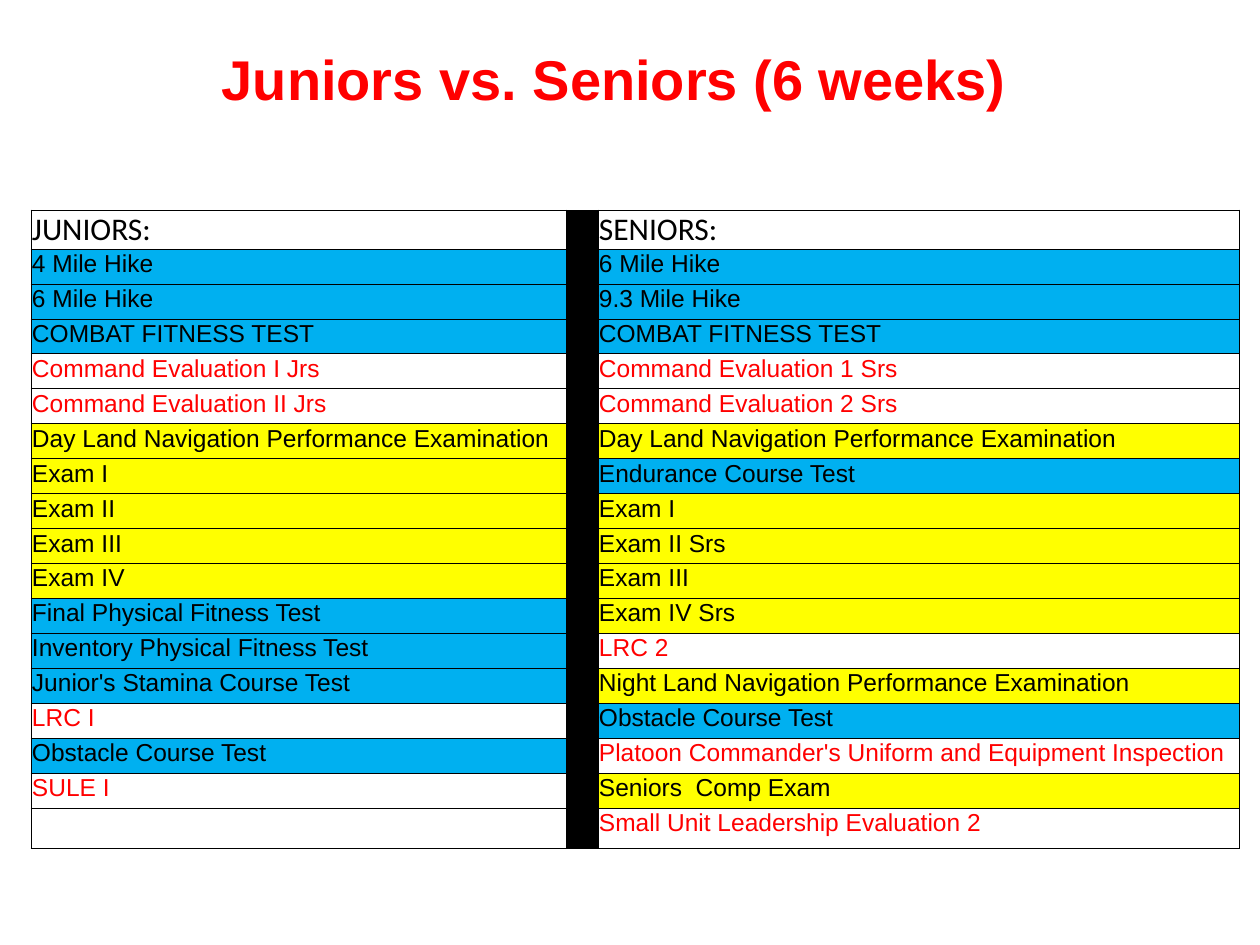
from dataclasses import dataclass
from itertools import zip_longest

from lxml.etree import SubElement
from pptx import Presentation
from pptx.dml.color import RGBColor
from pptx.enum.text import MSO_ANCHOR, PP_ALIGN
from pptx.oxml.ns import qn
from pptx.util import Emu, Pt


@dataclass(frozen=True)
class Theme:
    black: str = "000000"
    red: str = "FF0000"
    blue: str = "00B0F0"
    yellow: str = "FFFF00"
    body_font: str = "Arial"
    header_font: str = "Calibri"
    title_size: int = 32
    header_size: int = 18
    body_size: int = 14
    border_width: float = 0.5


THEME = Theme()

# Kind of event: (fill, text colour)
STYLES = {
    "physical": (THEME.blue, THEME.black),
    "academic": (THEME.yellow, THEME.black),
    "leadership": (None, THEME.red),
    "header": (None, THEME.black),
    "divider": (THEME.black, THEME.black),
    "empty": (None, THEME.black),
}

JUNIORS = [
    ("JUNIORS:", "header"),
    ("4 Mile Hike", "physical"),
    ("6 Mile Hike", "physical"),
    ("COMBAT FITNESS TEST", "physical"),
    ("Command Evaluation I Jrs", "leadership"),
    ("Command Evaluation II Jrs", "leadership"),
    ("Day Land Navigation Performance Examination", "academic"),
    ("Exam I", "academic"),
    ("Exam II", "academic"),
    ("Exam III", "academic"),
    ("Exam IV", "academic"),
    ("Final Physical Fitness Test", "physical"),
    ("Inventory Physical Fitness Test", "physical"),
    ("Junior's Stamina Course Test", "physical"),
    ("LRC I", "leadership"),
    ("Obstacle Course Test", "physical"),
    ("SULE I", "leadership"),
]
SENIORS = [
    ("SENIORS:", "header"),
    ("6 Mile Hike", "physical"),
    ("9.3 Mile Hike", "physical"),
    ("COMBAT FITNESS TEST", "physical"),
    ("Command Evaluation 1 Srs", "leadership"),
    ("Command Evaluation 2 Srs", "leadership"),
    ("Day Land Navigation Performance Examination", "academic"),
    ("Endurance Course Test", "physical"),
    ("Exam I", "academic"),
    ("Exam II Srs", "academic"),
    ("Exam III", "academic"),
    ("Exam IV Srs", "academic"),
    ("LRC 2", "leadership"),
    ("Night Land Navigation Performance Examination", "academic"),
    ("Obstacle Course Test", "physical"),
    ("Platoon Commander's Uniform and Equipment Inspection", "leadership"),
    ("Seniors  Comp Exam", "academic"),
    ("Small Unit Leadership Evaluation 2", "leadership"),
]


def px(length):
    return Emu(round(length * 914400 / 126))


def format_font(font, name, size, color, bold=False):
    font.name, font.size, font.bold = name, Pt(size), bold
    font.color.rgb = RGBColor.from_string(color)


def add_title(slide, text, left, top, width, height):
    title = slide.shapes.add_textbox(px(left), px(top), px(width), px(height))
    frame = title.text_frame
    frame.word_wrap = True
    frame.vertical_anchor = MSO_ANCHOR.MIDDLE
    frame.text = text
    heading = frame.paragraphs[0]
    heading.alignment = PP_ALIGN.CENTER
    format_font(heading.runs[0].font, THEME.body_font, THEME.title_size,
                THEME.red, bold=True)


def add_borders(cell):
    properties = cell._tc.get_or_add_tcPr()
    for side in ("a:lnL", "a:lnR", "a:lnT", "a:lnB"):
        line = SubElement(properties, qn(side), w=str(Pt(THEME.border_width)))
        fill = SubElement(line, qn("a:solidFill"))
        SubElement(fill, qn("a:srgbClr"), val=THEME.black)


def fill_cell(cell, text, kind):
    fill, color = STYLES[kind]
    cell.margin_left = cell.margin_right = cell.margin_top = px(1)
    cell.margin_bottom = 0
    add_borders(cell)
    if fill:
        cell.fill.solid()
        cell.fill.fore_color.rgb = RGBColor.from_string(fill)
    else:
        cell.fill.background()

    entry = cell.text_frame.paragraphs[0]
    if not text:
        # Keep empty cells from stretching their row
        SubElement(entry._p, qn("a:endParaRPr"), sz=str(THEME.body_size * 100))
        return
    entry.text = text
    if kind == "header":
        cell.vertical_anchor = MSO_ANCHOR.BOTTOM
        format_font(entry.runs[0].font, THEME.header_font, THEME.header_size, color)
    else:
        format_font(entry.runs[0].font, THEME.body_font, THEME.body_size, color)


def add_comparison(slide, juniors, seniors, left, top, width, height):
    junior_width, divider_width, row_height = 535, 32, 35
    header_height = 39
    pairs = list(zip_longest(juniors, seniors, fillvalue=("", "empty")))
    table = slide.shapes.add_table(len(pairs), 3, px(left), px(top),
                                   px(width), px(height)).table
    table.first_row = table.horz_banding = False

    # Column widths; the last row takes the remaining height
    widths = (junior_width, divider_width, width - junior_width - divider_width)
    for column, column_width in zip(table.columns, widths):
        column.width = px(column_width)
    heights = [header_height] + [row_height] * (len(pairs) - 2)
    heights.append(height - sum(heights))

    # Junior event, black divider, senior event
    for row, row_size, (junior, senior) in zip(table.rows, heights, pairs):
        row.height = px(row_size)
        for cell, (text, kind) in zip(row.cells, (junior, ("", "divider"), senior)):
            fill_cell(cell, text, kind)


def main():
    presentation = Presentation()
    presentation.slide_width, presentation.slide_height = px(1260), px(945)
    slide = presentation.slides.add_slide(presentation.slide_layouts[6])
    add_title(slide, "Juniors vs. Seniors (6 weeks)", 147, 42, 935, 73)
    add_comparison(slide, JUNIORS, SENIORS, 31, 210, 1208, 639)
    presentation.save("out.pptx")


if __name__ == "__main__":
    main()
